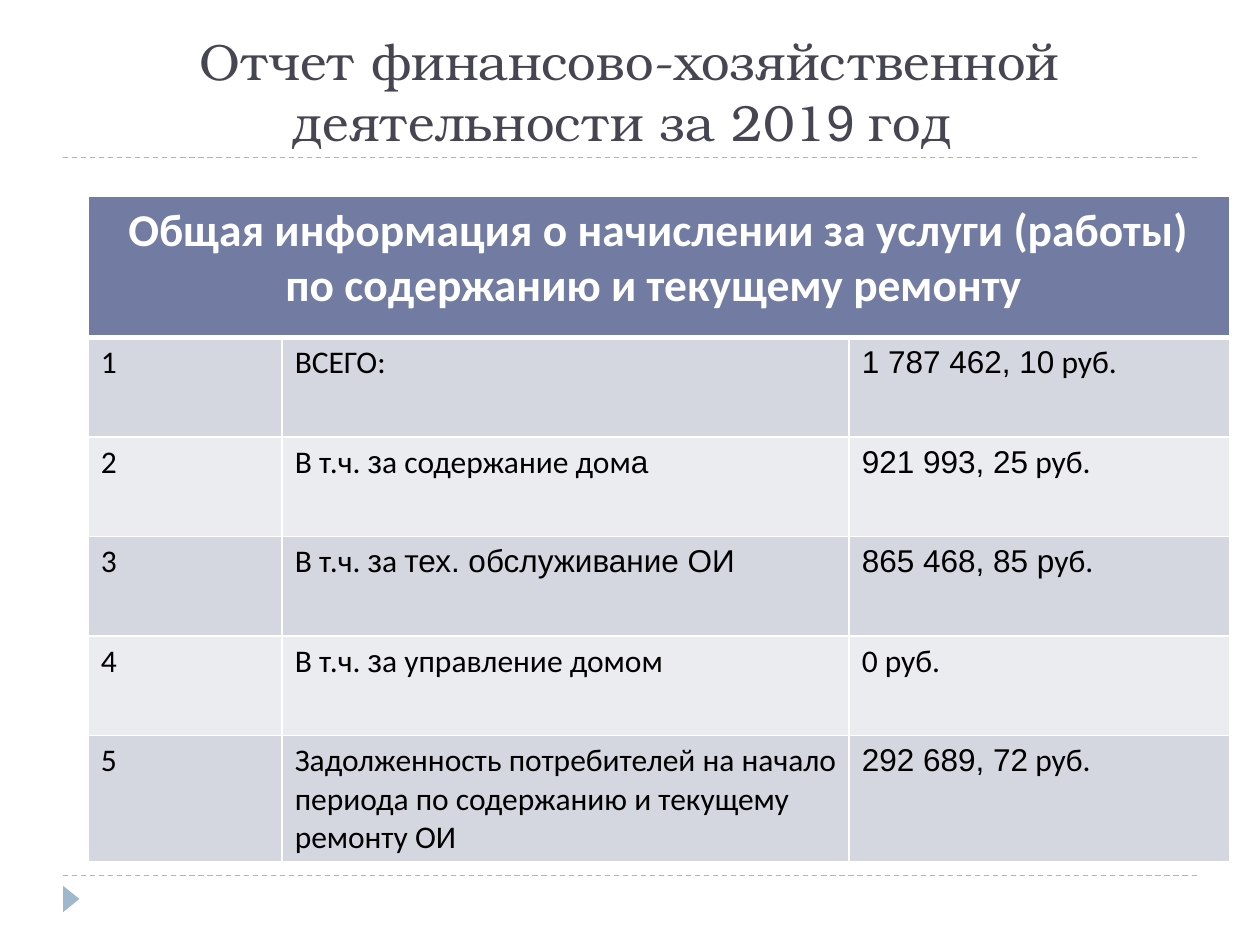
from dataclasses import dataclass

from lxml.etree import SubElement
from pptx import Presentation
from pptx.dml.color import RGBColor
from pptx.enum.dml import MSO_LINE_DASH_STYLE as Dash
from pptx.enum.shapes import MSO_CONNECTOR_TYPE as Connector, MSO_SHAPE as Shape
from pptx.enum.text import MSO_ANCHOR as Anchor, PP_ALIGN as Align
from pptx.oxml import parse_xml
from pptx.oxml.ns import nsdecls, qn
from pptx.util import Inches, Pt

WIDTH, HEIGHT = 10, 7.5
MARGIN = 0.05 * WIDTH
RULES = (1.25, 6.95)
COLUMNS = (1.54, 4.5, 3.02)
HEADER_HEIGHT, ROW_HEIGHT = 1.12, 0.79
ACCENT, WHITE, BLACK = "9FB8CD", "FFFFFF", "000000"
HEADER_FILL, BANDS = "727CA3", ("D5D7E0", "EBECF0")
BODY_FONTS = ("Calibri", "Arial")
TITLE = "Отчет финансово-хозяйственной деятельности за 201|9 |год "
HEADER = "Общая информация о начислении за услуги (работы) по содержанию и текущему ремонту "


@dataclass(frozen=True)
class Entry:
    """A table line; bars in its texts switch between the two fonts."""

    name: str
    amount: str


ENTRIES = (
    Entry("ВСЕГО:", "|1 787 462, 10| руб."),
    Entry("В т.ч. |з|а содержание дом|а", "|921 993, 25| руб."),
    Entry("В т.ч. |з|а |тех. обслуживание ОИ", "|865 468, 85 р|уб."),
    Entry("В т.ч. |з|а управление домом", "0 руб."),
    Entry("Задолженность потребителей на начало периода по содержанию и текущему ремонту ОИ",
          "|292 689, 72| руб."),
)


def color(value: str) -> RGBColor:
    """Turn a hex string into a colour."""
    return RGBColor.from_string(value)


def write(frame, text: str, fonts: tuple, size: int, ink: str, bold=False, align=Align.LEFT) -> None:
    """Write one paragraph whose runs alternate between two fonts."""
    paragraph = frame.paragraphs[0]
    paragraph.alignment = align
    paragraph.font.size = Pt(size)
    paragraph.font.bold = bold
    paragraph.font.color.rgb = color(ink)
    for index, part in enumerate(text.split("|")):
        if part:
            run = paragraph.add_run()
            run.text = part
            run.font.name = fonts[index % 2]


def draw_rule(slide, top: float) -> None:
    """Draw a dashed line between the side margins."""
    rule = slide.shapes.add_connector(
        Connector.STRAIGHT, Inches(MARGIN), Inches(top), Inches(WIDTH - MARGIN), Inches(top))
    rule.line.color.rgb = color(ACCENT)
    rule.line.width = Pt(0.75)
    rule.line.dash_style = Dash.DASH
    SubElement(rule._element.spPr, qn("a:effectLst"))


def draw_title(slide) -> None:
    """Draw the centred title above the first rule."""
    box = slide.shapes.add_textbox(Inches(MARGIN), Inches(0.25), Inches(WIDTH - 2 * MARGIN), Inches(1))
    box.text_frame.word_wrap = True
    box.text_frame.vertical_anchor = Anchor.BOTTOM
    write(box.text_frame, TITLE, ("TeX Gyre Bonum", "Arial"), 29, "464653", align=Align.CENTER)


def draw_marker(slide) -> None:
    """Draw the small triangle at the foot of the slide."""
    marker = slide.shapes.add_shape(
        Shape.ISOSCELES_TRIANGLE, Inches(0.46), Inches(7.07), Inches(0.21), Inches(0.13))
    marker.rotation = 90
    marker.shadow.inherit = False
    marker.fill.solid()
    marker.fill.fore_color.rgb = color(ACCENT)
    marker.line.fill.background()


def style_cell(cell, fill: str, top: float = 1, bottom: float = 1) -> None:
    """Fill a cell and give it white borders."""
    cell.fill.solid()
    cell.fill.fore_color.rgb = color(fill)
    properties = cell._tc.get_or_add_tcPr()
    for index, (side, width) in enumerate(zip("LRTB", (1, 1, top, bottom))):
        properties.insert(index, parse_xml(
            f'<a:ln{side} {nsdecls("a")} w="{Pt(width)}"><a:solidFill>'
            f'<a:srgbClr val="{WHITE}"/></a:solidFill></a:ln{side}>'))


def draw_table(slide) -> None:
    """Draw the table with a merged header and banded rows."""
    table = slide.shapes.add_table(
        len(ENTRIES) + 1, len(COLUMNS), Inches(0.7), Inches(1.56), Inches(sum(COLUMNS)),
        Inches(HEADER_HEIGHT + ROW_HEIGHT * len(ENTRIES))).table
    for column, width in zip(table.columns, COLUMNS):
        column.width = Inches(width)
    for index, row in enumerate(table.rows):
        row.height = Inches(ROW_HEIGHT if index else HEADER_HEIGHT)
    for cell in table.rows[0].cells:
        style_cell(cell, HEADER_FILL, bottom=3)
    header = table.cell(0, 0)
    header.merge(table.cell(0, len(COLUMNS) - 1))
    write(header.text_frame, HEADER, BODY_FONTS, 26, WHITE, True, Align.CENTER)
    for number, entry in enumerate(ENTRIES, 1):
        texts = (str(number), entry.name, entry.amount)
        for cell, text in zip(table.rows[number].cells, texts):
            style_cell(cell, BANDS[(number - 1) % 2], top=3 if number == 1 else 1)
            write(cell.text_frame, text, BODY_FONTS, 18, BLACK)


def main() -> None:
    """Build and save the slide."""
    presentation = Presentation()
    presentation.slide_width, presentation.slide_height = Inches(WIDTH), Inches(HEIGHT)
    slide = presentation.slides.add_slide(presentation.slide_layouts[6])
    for top in RULES:
        draw_rule(slide, top)
    draw_marker(slide)
    draw_title(slide)
    draw_table(slide)
    presentation.save("out.pptx")


if __name__ == "__main__":
    main()
